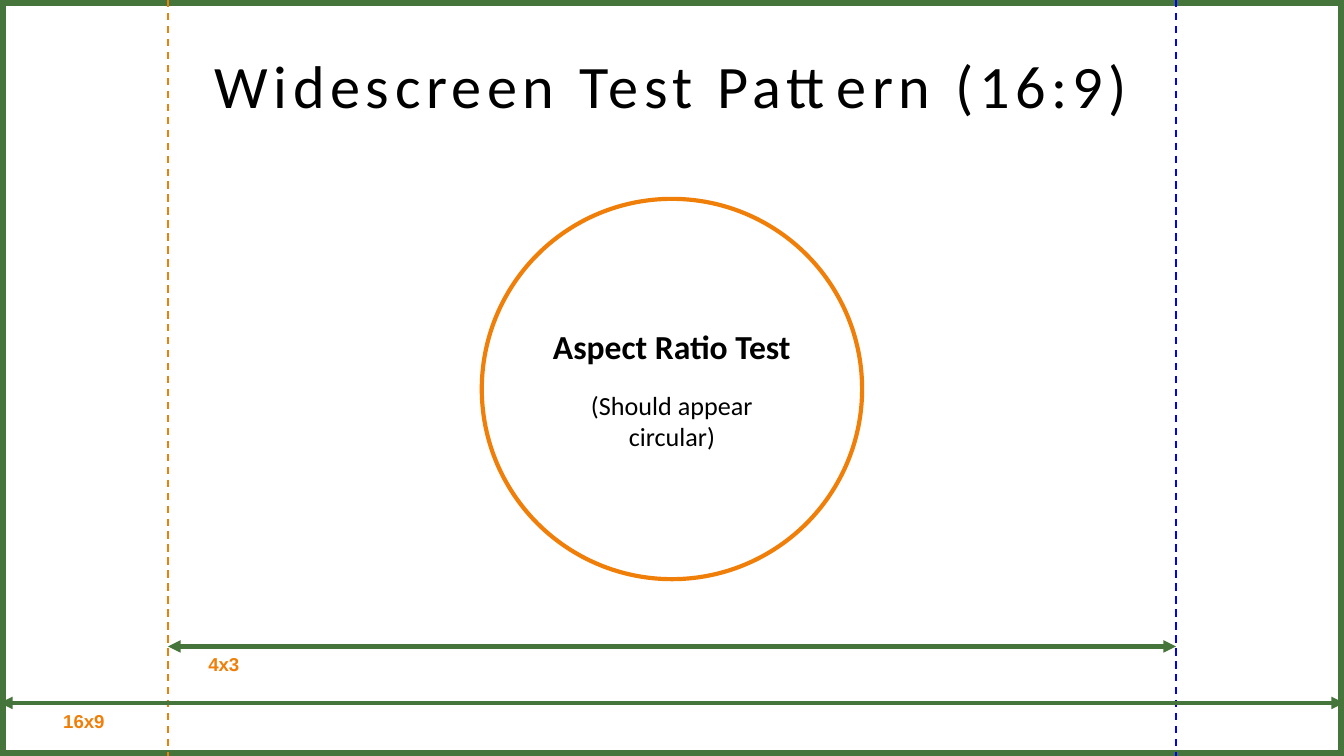
"""Build a widescreen aspect ratio test slide."""
import pptx
import pptx.dml.color
import pptx.enum.dml
import pptx.enum.shapes
import pptx.enum.text
import pptx.oxml.ns
import pptx.util
from lxml import etree

GREEN = pptx.dml.color.RGBColor(0x45, 0x75, 0x3A)
ORANGE = pptx.dml.color.RGBColor(0xF0, 0x7F, 0x09)
BLUE = pptx.dml.color.RGBColor(0x00, 0x00, 0xFF)
BLACK = pptx.dml.color.RGBColor(0x00, 0x00, 0x00)

WIDTH = 10
HEIGHT = WIDTH * 9 / 16
NARROW_WIDTH = HEIGHT * 4 / 3
NARROW_LEFT = (WIDTH - NARROW_WIDTH) / 2
SHAPES = pptx.enum.shapes.MSO_SHAPE
CENTER = pptx.enum.text.PP_ALIGN.CENTER


def inches(*lengths):
    """Convert lengths in inches to slide units."""
    return [pptx.util.Inches(length) for length in lengths]


def add_run(paragraph, text, size, color, font="Calibri", bold=False):
    """Append a formatted run to a paragraph and return it."""
    run = paragraph.add_run()
    run.text = text
    run.font.name = font
    run.font.size = pptx.util.Pt(size)
    run.font.bold = bold
    run.font.color.rgb = color
    return run


def add_text_box(slide, box):
    """Add a wrapping text box and return its text frame."""
    frame = slide.shapes.add_textbox(*inches(*box)).text_frame
    frame.word_wrap = True
    return frame


def add_outline(slide, kind, box, color, weight):
    """Add an unfilled shape with a coloured outline."""
    shape = slide.shapes.add_shape(kind, *inches(*box))
    shape.shadow.inherit = False
    shape.fill.background()
    shape.line.color.rgb = color
    shape.line.width = pptx.util.Pt(weight)
    return shape


def add_line(slide, start, end, color, weight):
    """Add a straight connector without a shadow."""
    connector = slide.shapes.add_connector(
        pptx.enum.shapes.MSO_CONNECTOR.STRAIGHT, *inches(*start, *end))
    connector.line.color.rgb = color
    connector.line.width = pptx.util.Pt(weight)
    etree.SubElement(connector._element.spPr, pptx.oxml.ns.qn("a:effectLst"))
    return connector


def add_title(slide, box):
    """Place the letter-spaced title in its box."""
    paragraph = add_text_box(slide, box).paragraphs[0]
    paragraph.alignment = CENTER
    run = add_run(paragraph, "Widescreen Test Pattern (16:9)", 32.3, BLACK)
    run.font._element.set("spc", "300")


def add_guide(slide, box, color):
    """Draw a dashed vertical guide down the left side of the box."""
    left, top, _, height = box
    guide = add_line(slide, (left, top), (left, top + height), color, 1)
    guide.line.dash_style = pptx.enum.dml.MSO_LINE.DASH


def add_measure(slide, box, label, label_offset):
    """Draw a double-headed arrow along the box top with a label below."""
    left, top, width, height = box
    arrow = add_line(slide, (left, top), (left + width, top), GREEN, 2.25)
    line = arrow.line._get_or_add_ln()
    for end in ("a:headEnd", "a:tailEnd"):
        etree.SubElement(line, pptx.oxml.ns.qn(end), type="triangle")
    frame = add_text_box(slide, (left + label_offset, top, 0.58, height))
    frame.margin_left = frame.margin_right = pptx.util.Inches(0.05)
    frame.margin_top = frame.margin_bottom = pptx.util.Inches(0.05)
    add_run(frame.paragraphs[0], label, 10, ORANGE, "Arial", True)


def add_circle(slide, box):
    """Place the captioned aspect ratio circle in its box."""
    frame = add_outline(slide, SHAPES.OVAL, box, ORANGE, 2.25).text_frame
    frame.word_wrap = True
    frame.vertical_anchor = pptx.enum.text.MSO_ANCHOR.MIDDLE
    heading, caption = frame.paragraphs[0], frame.add_paragraph()
    heading.alignment = caption.alignment = CENTER
    caption.space_before = pptx.util.Pt(12)
    add_run(heading, "Aspect Ratio Test", 18, BLACK, bold=True)
    add_run(caption, "(Should appear circular)", 14, BLACK)


def add_test_pattern(slide, box):
    """Place every part of the test pattern inside the box."""
    left, top, width, height = box
    diameter = 2.83
    add_outline(slide, SHAPES.RECTANGLE, box, GREEN, 6)
    add_title(slide, (left + 0.75, top + 0.31, width - 1.5, 0.92))
    for guide_left, color in ((NARROW_LEFT, ORANGE),
                              (NARROW_LEFT + NARROW_WIDTH, BLUE)):
        add_guide(slide, (left + guide_left, top, 0, height), color)
    add_measure(slide, (left, top + 5.23, width, 0.27), "16x9", 0.42)
    add_circle(slide, (left + (width - diameter) / 2, top + 1.48,
                       diameter, diameter))
    add_measure(slide, (left + NARROW_LEFT, top + 4.81, NARROW_WIDTH, 0.27),
                "4x3", 0.25)


def main():
    """Create and save the presentation."""
    presentation = pptx.Presentation()
    presentation.slide_width, presentation.slide_height = inches(WIDTH, HEIGHT)
    slide = presentation.slides.add_slide(presentation.slide_layouts[6])
    add_test_pattern(slide, (0, 0, WIDTH, HEIGHT))
    presentation.save("out.pptx")


if __name__ == "__main__":
    main()
